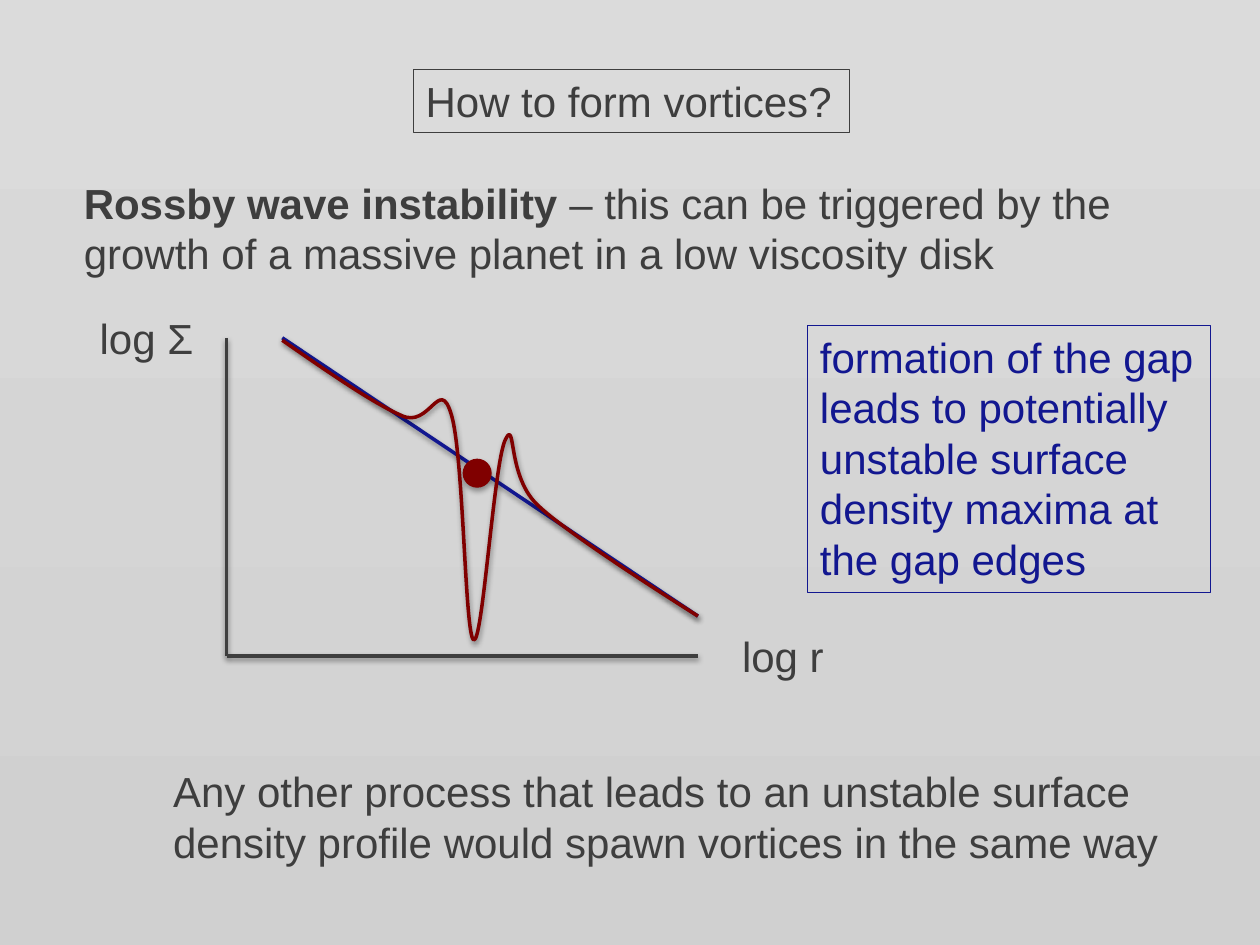
from dataclasses import dataclass
from typing import NamedTuple

from lxml import etree
from pptx import Presentation
from pptx.dml.color import RGBColor
from pptx.enum import shapes, text
from pptx.oxml import ns
from pptx.util import Cm, Pt


@dataclass(frozen=True)
class Theme:
    ink: str = "3E3E3E"
    blue: str = "121790"
    red: str = "800000"
    backdrop: tuple[str, str] = ("DBDBDB", "D0D0D0")
    font: str = "Arial"
    size: float = 24
    thin: float = 0.75
    thick: float = 2


THEME = Theme()


class Box(NamedTuple):
    """Left, top, width and height in centimetres."""
    left: float
    top: float
    width: float
    height: float

    def lengths(self) -> list[Cm]:
        return [Cm(value) for value in self]


class Point(NamedTuple):
    x: float
    y: float


class Bend(NamedTuple):
    """Cubic segment: two control points and the end point."""
    first: Point
    second: Point
    end: Point


@dataclass(frozen=True)
class Segment:
    start: Point
    end: Point
    color: str


@dataclass(frozen=True)
class Label:
    box: Box
    lines: tuple[str, ...]
    color: str = THEME.ink
    framed: bool = False
    lead: str = ""  # bold opening words


def rgb(value: str) -> RGBColor:
    return RGBColor.from_string(value)


def outline(shape, color: str, width: float) -> None:
    shape.line.color.rgb = rgb(color)
    shape.line.width = Pt(width)


def drop_shadow(shape, opacity: int = 38, distance: float = 1.6) -> None:
    effects = etree.SubElement(shape._element.spPr, ns.qn("a:effectLst"))
    shadow = etree.SubElement(
        effects, ns.qn("a:outerShdw"), blurRad=str(Pt(3.1)),
        dist=str(Pt(distance)), dir="5400000", rotWithShape="0")
    black = etree.SubElement(shadow, ns.qn("a:srgbClr"), val="000000")
    etree.SubElement(black, ns.qn("a:alpha"), val=str(opacity * 1000))


def add_run(paragraph, words: str, *, color: str, bold: bool = False) -> None:
    run = paragraph.add_run()
    run.text = words
    run.font.name = THEME.font
    run.font.size = Pt(THEME.size)
    run.font.bold = bold
    run.font.color.rgb = rgb(color)


def add_label(slide, label: Label) -> None:
    if label.framed:
        holder = slide.shapes.add_shape(
            shapes.MSO_SHAPE.RECTANGLE, *label.box.lengths())
        holder.fill.background()
        holder.shadow.inherit = False
        outline(holder, label.color, THEME.thin)
    else:
        holder = slide.shapes.add_textbox(*label.box.lengths())
    frame = holder.text_frame
    frame.word_wrap = False
    frame.auto_size = text.MSO_AUTO_SIZE.SHAPE_TO_FIT_TEXT
    frame.vertical_anchor = text.MSO_ANCHOR.TOP
    for index, line in enumerate(label.lines):
        paragraph = frame.add_paragraph() if index else frame.paragraphs[0]
        paragraph.alignment = text.PP_ALIGN.LEFT
        if label.lead and index == 0:
            add_run(paragraph, label.lead, color=label.color, bold=True)
        add_run(paragraph, line, color=label.color)


def add_segment(slide, segment: Segment) -> None:
    line = slide.shapes.add_connector(
        shapes.MSO_CONNECTOR.STRAIGHT,
        *(Cm(value) for value in (*segment.start, *segment.end)))
    outline(line, segment.color, THEME.thick)
    drop_shadow(line)


def add_curve(slide, start: Point, bends: list[Bend], color: str) -> None:
    builder = slide.shapes.build_freeform(Cm(start.x), Cm(start.y))
    builder.add_line_segments(
        [(Cm(bend.end.x), Cm(bend.end.y)) for bend in bends], close=False)
    curve = builder.convert_to_shape()
    # Turn each straight piece into a cubic one
    pieces = list(curve._element.iter(ns.qn("a:lnTo")))
    for piece, bend in zip(pieces, bends):
        piece.tag = ns.qn("a:cubicBezTo")
        for place, control in enumerate((bend.first, bend.second)):
            knot = etree.Element(
                ns.qn("a:pt"), x=str(Cm(control.x) - curve.left),
                y=str(Cm(control.y) - curve.top))
            piece.insert(place, knot)
    curve.fill.background()
    outline(curve, color, THEME.thick)
    drop_shadow(curve)


def add_planet(slide, box: Box) -> None:
    planet = slide.shapes.add_shape(shapes.MSO_SHAPE.OVAL, *box.lengths())
    planet.fill.solid()
    planet.fill.fore_color.rgb = rgb(THEME.red)
    outline(planet, THEME.red, THEME.thin)
    drop_shadow(planet, opacity=35, distance=1.8)


# Plot geometry
AXIS_TOP, ORIGIN, AXIS_END = Point(4.57, 6.81), Point(4.57, 13.22), Point(14.07, 13.22)
PROFILE_START, PROFILE_END = Point(5.69, 6.81), Point(14.07, 12.42)
SEGMENTS = [
    Segment(AXIS_TOP, ORIGIN, THEME.ink),
    Segment(ORIGIN, AXIS_END, THEME.ink),
    Segment(PROFILE_START, PROFILE_END, THEME.blue),
]
GAP_START = Point(5.69, 6.86)
GAP_BENDS = [
    Bend(Point(6.6, 7.49), Point(7.52, 8.13), Point(8.1, 8.38)),
    Bend(Point(8.66, 8.64), Point(8.86, 7.59), Point(9.09, 8.33)),
    Bend(Point(9.35, 9.09), Point(9.37, 12.83), Point(9.55, 12.9)),
    Bend(Point(9.73, 13), Point(9.96, 9.3), Point(10.19, 8.86)),
    Bend(Point(10.41, 8.41), Point(10.21, 9.63), Point(10.87, 10.21)),
    Bend(Point(11.51, 10.82), PROFILE_END, PROFILE_END),
]

# Wording
HEADINGS = [
    Label(Box(8.33, 1.4, 8.79, 1.28), ("How to form vortices?",), framed=True),
    Label(Box(1.44, 3.45, 21.41, 2.31),
          ("– this can be triggered by the",
           "growth of a massive planet in a low viscosity disk"),
          lead="Rossby wave instability "),
]
AXIS_NAMES = [
    Label(Box(14.71, 12.59, 2.18, 1.28), ("log r",)),
    Label(Box(1.76, 6.17, 2.39, 1.28), ("log Σ",)),
]
CONCLUSIONS = [
    Label(Box(16.28, 6.56, 8.12, 5.38),
          ("formation of the gap", "leads to potentially", "unstable surface",
           "density maxima at", "the gap edges"),
          color=THEME.blue, framed=True),
    Label(Box(3.24, 15.31, 20.6, 2.31),
          ("Any other process that leads to an unstable surface",
           "density profile would spawn vortices in the same way")),
]


def main() -> None:
    deck = Presentation()
    deck.slide_width, deck.slide_height = Cm(25.4), Cm(19.05)
    slide = deck.slides.add_slide(deck.slide_layouts[6])

    # Background, light at the top
    backdrop = slide.background.fill
    backdrop.gradient()
    backdrop.gradient_angle = 270
    for stop, color, position in zip(backdrop.gradient_stops, THEME.backdrop, (0, 1)):
        stop.color.rgb = rgb(color)
        stop.position = position

    for heading in HEADINGS:
        add_label(slide, heading)

    # Surface density plot with the planet in its gap
    for segment in SEGMENTS:
        add_segment(slide, segment)
    for axis_name in AXIS_NAMES:
        add_label(slide, axis_name)
    add_curve(slide, GAP_START, GAP_BENDS, THEME.red)
    add_planet(slide, Box(9.34, 9.26, 0.56, 0.56))

    for conclusion in CONCLUSIONS:
        add_label(slide, conclusion)

    deck.save("out.pptx")


if __name__ == "__main__":
    main()
